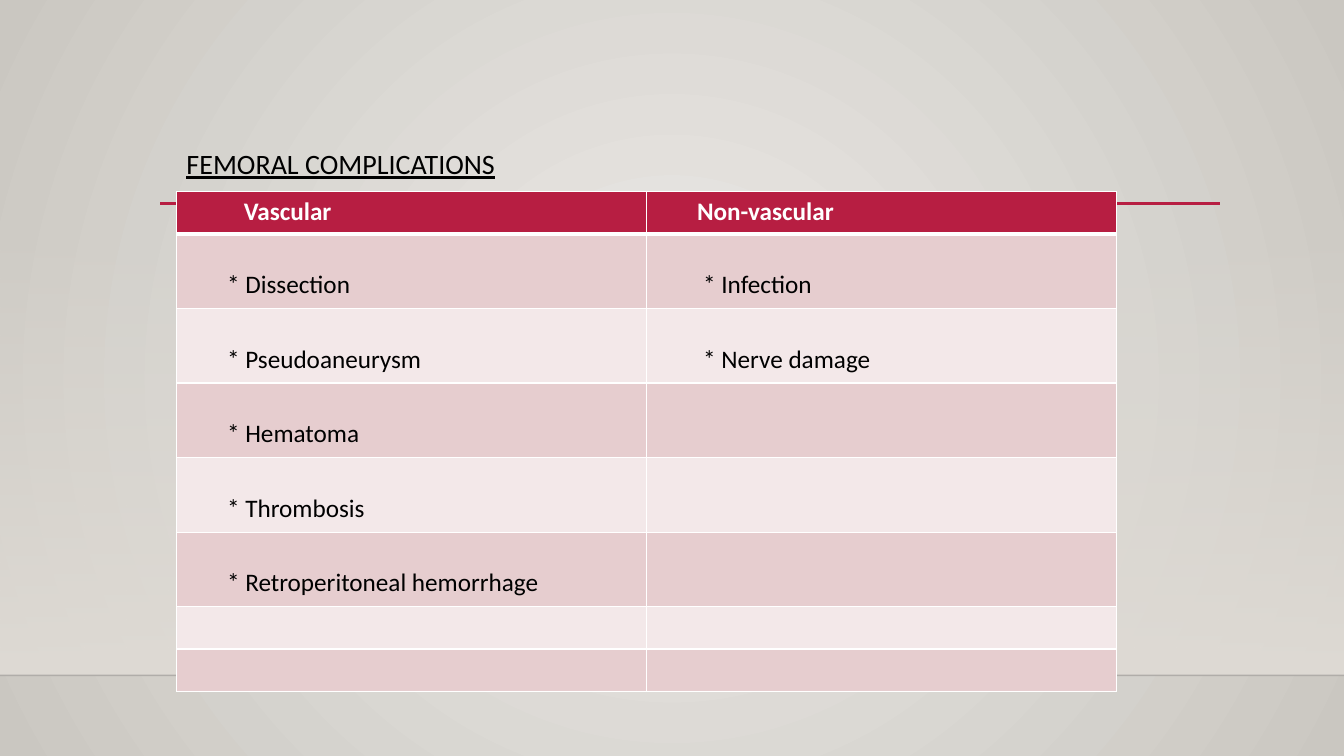
from dataclasses import dataclass

from lxml import etree
from pptx import Presentation
from pptx.dml.color import RGBColor
from pptx.enum import shapes, text
from pptx.oxml.ns import qn
from pptx.util import Pt

COLORS = {
    "crimson": "B71E42",
    "white": "FFFFFF",
    "black": "000000",
    "hairline": "000001",
    "band_dark": "E6CDCF",
    "band_light": "F3E8E9",
    "glow": "ECEAE7",
    "edge": "CAC7C1",
    "floor": "DFDBD5",
}
FONT = "Calibri"
SLIDE_WIDTH, SLIDE_HEIGHT = 960, 540
FLOOR_Y = 482.4
TABLE_LEFT, TABLE_TOP = 126, 136.8
SHORT_ROW, TALL_ROW = 30.24, 53.28


@dataclass
class Rule:
    left: float
    right: float
    y: float
    color: str
    width: float
    opacity: int = 100


@dataclass
class Column:
    heading: str
    heading_indent: float
    items: list[str]
    item_indent: float
    width: float = 335.88


RULES = [
    Rule(0, SLIDE_WIDTH, FLOOR_Y, "hairline", 1, 20),
    Rule(114.5, 871.2, 145.2, "crimson", 2.5),
]
COLUMNS = [
    Column(
        "Vascular", 48.2,
        ["Dissection", "Pseudoaneurysm", "Hematoma", "Thrombosis",
         "Retroperitoneal hemorrhage"],
        36.2,
    ),
    Column("Non-vascular", 36, ["Infection", "Nerve damage"], 40.4),
]
ROW_HEIGHTS = [SHORT_ROW] + [TALL_ROW] * 5 + [SHORT_ROW] * 2


def rgb(name: str) -> RGBColor:
    return RGBColor.from_string(COLORS[name])


def set_opacity(element, percent: int) -> None:
    """Make the first plain colour inside the element translucent."""
    color = element.find(f".//{qn('a:srgbClr')}")
    etree.SubElement(color, qn("a:alpha"), val=str(percent * 1000))


def set_gradient(fill, first: str, last: str) -> None:
    fill.gradient()
    for stop, name, position in zip(fill.gradient_stops, (first, last), (0, 1)):
        stop.color.rgb = rgb(name)
        stop.position = position


def add_text(paragraph, words: str, size: float, color: str, bold: bool = False):
    run = paragraph.add_run()
    run.text = words
    run.font.name = FONT
    run.font.size = Pt(size)
    run.font.bold = bold
    run.font.color.rgb = rgb(color)
    return run


def paint_background(slide) -> None:
    set_gradient(slide.background.fill, "glow", "edge")
    gradient = slide.element.find(f".//{qn('a:gradFill')}")
    gradient.remove(gradient.find(qn("a:lin")))
    circle = etree.SubElement(gradient, qn("a:path"), path="circle")
    etree.SubElement(circle, qn("a:fillToRect"),
                     l="50000", t="50000", r="50000", b="50000")


def add_wall(slide) -> None:
    top = 159.1
    wall = slide.shapes.add_shape(
        shapes.MSO_SHAPE.RECTANGLE, 0, Pt(top), Pt(SLIDE_WIDTH), Pt(FLOOR_Y - top))
    wall.shadow.inherit = False
    wall.line.fill.background()
    set_gradient(wall.fill, "floor", "floor")
    wall.fill.gradient_angle = 270
    set_opacity(wall.element, 0)


def add_rule(slide, rule: Rule) -> None:
    line = slide.shapes.add_connector(
        shapes.MSO_CONNECTOR.STRAIGHT,
        Pt(rule.left), Pt(rule.y), Pt(rule.right), Pt(rule.y))
    line.line.color.rgb = rgb(rule.color)
    line.line.width = Pt(rule.width)
    if rule.opacity < 100:
        set_opacity(line.element, rule.opacity)
    etree.SubElement(line.element.spPr, qn("a:effectLst"))


def set_borders(cell, bottom_width: float) -> None:
    properties = cell._tc.get_or_add_tcPr()
    widths = {"a:lnL": 1, "a:lnR": 1, "a:lnT": 1, "a:lnB": bottom_width}
    for index, (side, width) in enumerate(widths.items()):
        border = etree.Element(qn(side), w=str(Pt(width)))
        fill = etree.SubElement(border, qn("a:solidFill"))
        etree.SubElement(fill, qn("a:srgbClr"), val=COLORS["white"])
        properties.insert(index, border)


def fill_cell(cell, column: Column, row: int) -> None:
    is_heading = row == 0
    cell.fill.solid()
    if is_heading:
        cell.fill.fore_color.rgb = rgb("crimson")
    else:
        cell.fill.fore_color.rgb = rgb("band_dark" if row % 2 else "band_light")
    set_borders(cell, 3 if is_heading else 1)
    paragraph = cell.text_frame.paragraphs[0]
    if is_heading:
        cell.margin_left = Pt(column.heading_indent)
        add_text(paragraph, column.heading, 18, "white", bold=True)
    elif row <= len(column.items):
        cell.margin_left = Pt(column.item_indent)
        cell.margin_top = Pt(25.6)
        add_text(paragraph, f"* {column.items[row - 1]}", 18, "black")


def add_complications_table(slide) -> None:
    frame = slide.shapes.add_table(
        len(ROW_HEIGHTS), len(COLUMNS), Pt(TABLE_LEFT), Pt(TABLE_TOP),
        Pt(sum(column.width for column in COLUMNS)), Pt(sum(ROW_HEIGHTS)))
    table = frame.table
    for row, height in enumerate(ROW_HEIGHTS):
        table.rows[row].height = Pt(height)
    for index, column in enumerate(COLUMNS):
        table.columns[index].width = Pt(column.width)
        for row in range(len(ROW_HEIGHTS)):
            fill_cell(table.cell(row, index), column, row)


def format_title(slide) -> None:
    title = slide.shapes.title
    title.left, title.top = Pt(TABLE_LEFT), Pt(103.7)
    title.width, title.height = Pt(707), Pt(42.5)
    title.text_frame.word_wrap = True
    title.text_frame.auto_size = text.MSO_AUTO_SIZE.NONE
    title.text_frame.vertical_anchor = text.MSO_ANCHOR.TOP
    paragraph = title.text_frame.paragraphs[0]
    paragraph.alignment = text.PP_ALIGN.LEFT
    paragraph.line_spacing = 0.9
    run = add_text(paragraph, "FEMORAL COMPLICATIONS", 20, "black")
    run.font.underline = True
    slide.shapes.element.append(title.element)


def main() -> None:
    presentation = Presentation()
    presentation.slide_width = Pt(SLIDE_WIDTH)
    presentation.slide_height = Pt(SLIDE_HEIGHT)
    slide = presentation.slides.add_slide(presentation.slide_layouts[5])
    paint_background(slide)
    add_wall(slide)
    for rule in RULES:
        add_rule(slide, rule)
    add_complications_table(slide)
    format_title(slide)
    presentation.save("out.pptx")


if __name__ == "__main__":
    main()
